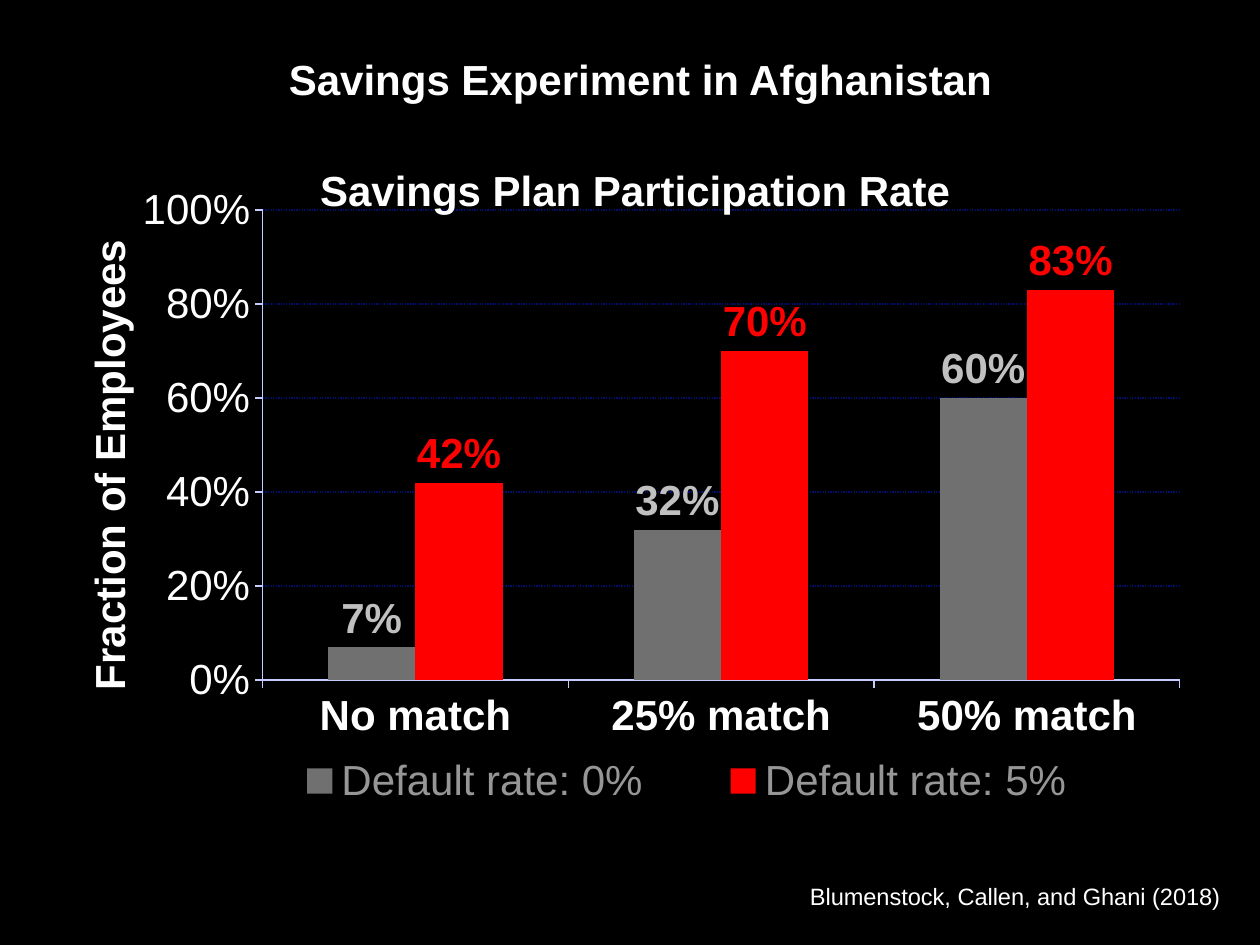
from lxml import etree
from pptx import Presentation
from pptx.chart.data import CategoryChartData
from pptx.dml.color import RGBColor
from pptx.enum import chart as ch, dml, text as tx
from pptx.oxml.ns import qn
from pptx.util import Pt

HEADING = "Savings Experiment in Afghanistan"
CHART_TITLE = "Savings Plan Participation Rate"
AXIS_TITLE = "Fraction of Employees"
CITATION = "Blumenstock, Callen, and Ghani (2018)"
MATCHES = ["No match", "25% match", "50% match"]
RATES = [
    ("Default rate: 0%", [0.07, 0.32, 0.60], "707070", "C0C0C0"),
    ("Default rate: 5%", [0.42, 0.70, 0.83], "FF0000", "FF0000"),
]
WHITE, AXIS, GRID, LEGEND = "FFFFFF", "C4CCFF", "000F71", "969696"


def rgb(value):
    return RGBColor.from_string(value)


def style(font, size=24, color=WHITE, bold=False):
    font.name = "Arial"
    font.size = Pt(size)
    font.bold = bold
    font.color.rgb = rgb(color)


def write(frame, words, align=None, **look):
    paragraph = frame.paragraphs[0]
    paragraph.alignment = align
    run = paragraph.add_run()
    run.text = words
    style(run.font, **look)


def add_label(slide, words, box, wrap=True, **look):
    frame = slide.shapes.add_textbox(*map(Pt, box)).text_frame
    frame.word_wrap = wrap
    frame.vertical_anchor = tx.MSO_ANCHOR.MIDDLE
    write(frame, words, **look)
    return frame


def place(parent, index, inner=False, **edges):
    for old in parent.findall(qn("c:layout")):
        parent.remove(old)
    layout = etree.Element(qn("c:layout"))
    manual = etree.SubElement(layout, qn("c:manualLayout"))
    settings = {"layoutTarget": "inner"} if inner else {}
    settings.update(xMode="edge", yMode="edge", **edges)
    for tag, value in settings.items():
        etree.SubElement(manual, qn("c:" + tag)).set("val", str(value))
    parent.insert(index, layout)


def add_rate_chart(slide):
    data = CategoryChartData(number_format="0%")
    data.categories = MATCHES
    for name, values, _, _ in RATES:
        data.add_series(name, values)
    chart = slide.shapes.add_chart(
        ch.XL_CHART_TYPE.COLUMN_CLUSTERED, Pt(36), Pt(73.5), Pt(648), Pt(394.5), data
    ).chart
    style(chart.font, size=10, color=AXIS)

    chart.has_title = True
    write(chart.chart_title.text_frame, CHART_TITLE, bold=True)
    chart.chart_title.include_in_layout = False
    place(chart.chart_title._element, 1, x=0.22, y=0.04)

    chart.has_legend = True
    legend = chart.legend
    legend.position = ch.XL_LEGEND_POSITION.BOTTOM
    legend.include_in_layout = False
    style(legend.font, color=LEGEND)
    place(legend._element, 1, x=0.15, y=0.9, w=0.8, h=0.09)

    matches, share = chart.category_axis, chart.value_axis
    for axis, bold in ((matches, True), (share, False)):
        axis.major_tick_mark = ch.XL_TICK_MARK.OUTSIDE
        axis.minor_tick_mark = ch.XL_TICK_MARK.NONE
        axis.format.line.color.rgb = rgb(AXIS)
        axis.format.line.width = Pt(0.75)
        style(axis.tick_labels.font, bold=bold)
    share.minimum_scale, share.maximum_scale, share.major_unit = 0, 1, 0.2
    share.tick_labels.number_format = "0%"
    share.tick_labels.number_format_is_linked = False
    share.has_major_gridlines = True
    grid = share.major_gridlines.format.line
    grid.color.rgb = rgb(GRID)
    grid.width = Pt(0.75)
    grid.dash_style = dml.MSO_LINE.ROUND_DOT

    write(share.axis_title.text_frame, AXIS_TITLE, bold=True)
    axis_title = share.axis_title._element
    body = next(axis_title.iter(qn("a:bodyPr")))
    body.set("rot", "-5400000")
    body.set("vert", "horz")
    place(axis_title, 1, x=0.01, y=0.15)

    plot = chart.plots[0]
    plot.gap_width, plot.overlap = 150, 0
    plot.vary_by_categories = False
    place(plot._element.getparent(), 0, inner=True, x=0.176, y=0.118, w=0.809, h=0.681)
    for series, (_, _, fill, label_color) in zip(plot.series, RATES):
        series.format.fill.solid()
        series.format.fill.fore_color.rgb = rgb(fill)
        series.invert_if_negative = False
        labels = series.data_labels
        labels.show_value = True
        labels.number_format = "0%"
        labels.number_format_is_linked = False
        labels.position = ch.XL_LABEL_POSITION.OUTSIDE_END
        style(labels.font, color=label_color, bold=True)


def main():
    deck = Presentation()
    deck.slide_width, deck.slide_height = Pt(720), Pt(540)
    slide = deck.slides.add_slide(deck.slide_layouts[6])
    slide.background.fill.solid()
    slide.background.fill.fore_color.rgb = rgb("000000")
    add_label(slide, HEADING, (42, 17.5, 648, 55.5), align=tx.PP_ALIGN.CENTER, bold=True)
    add_rate_chart(slide)
    citation = add_label(slide, CITATION, (455.75, 500.5, 252, 23.5), wrap=False, size=13.5)
    citation.auto_size = tx.MSO_AUTO_SIZE.SHAPE_TO_FIT_TEXT
    deck.save("out.pptx")


if __name__ == "__main__":
    main()
